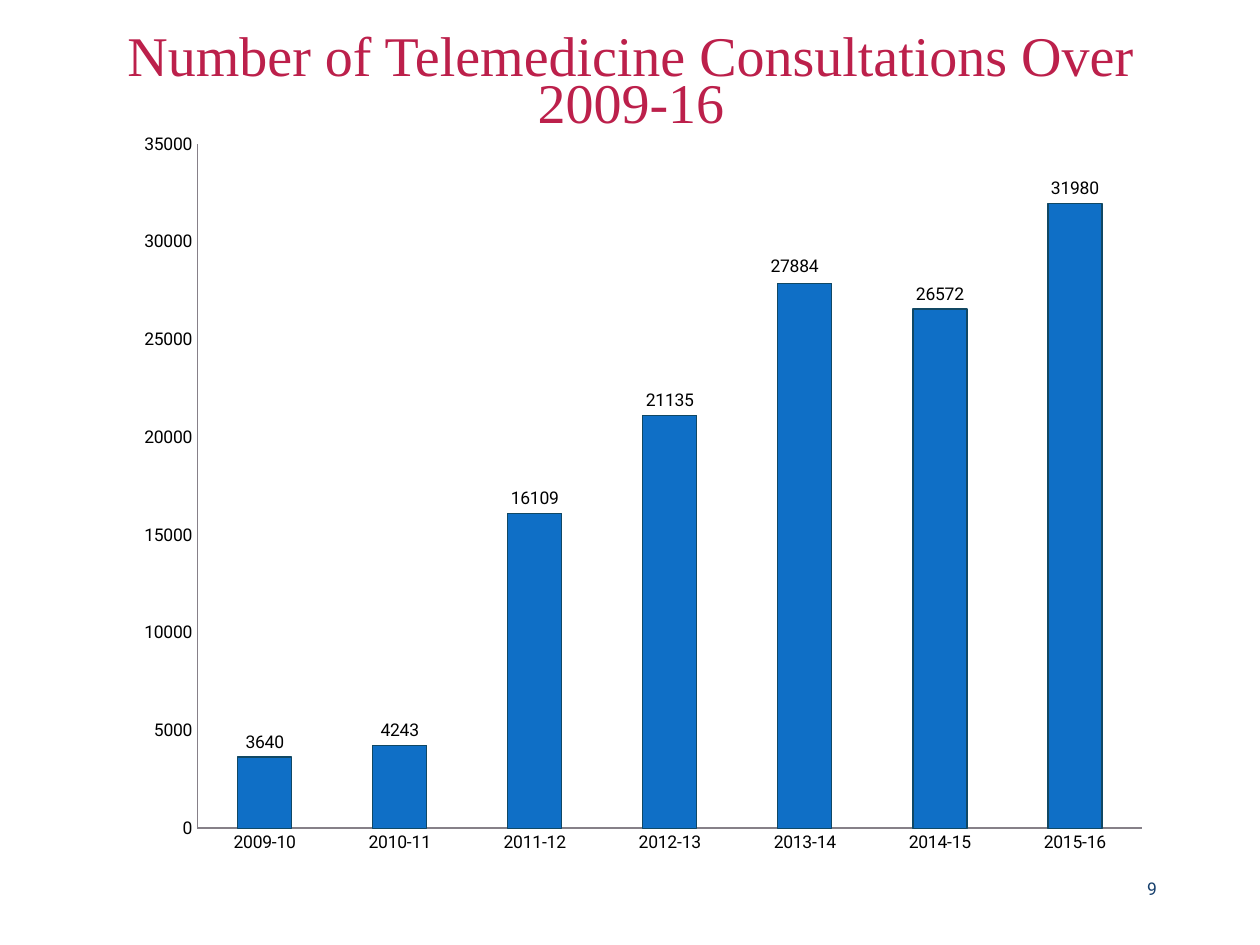
from dataclasses import dataclass

from lxml import etree
from pptx import Presentation
from pptx.chart.data import CategoryChartData
from pptx.dml.color import RGBColor
from pptx.enum import chart as charts, text
from pptx.oxml import parse_xml
from pptx.oxml.ns import nsdecls, qn
from pptx.util import Emu, Pt

PX = 914400 / 126


@dataclass(frozen=True)
class Theme:
    title_font: str = "Times New Roman"
    body_font: str = "Roboto"
    title_size: int = 32
    body_size: int = 10
    title: str = "BC204B"
    number: str = "17406D"
    ink: str = "000000"
    bar: str = "0F6FC6"
    bar_edge: str = "114864"
    axis: str = "868088"
    paper: str = "FFFFFF"


THEME = Theme()

CONSULTATIONS = {
    "2009-10": 3640,
    "2010-11": 4243,
    "2011-12": 16109,
    "2012-13": 21135,
    "2013-14": 27884,
    "2014-15": 26572,
    "2015-16": 31980,
}


def px(length):
    return Emu(round(length * PX))


def style_font(font, name, size, color):
    font.name = name
    font.size = Pt(size)
    font.bold = False
    font.color.rgb = RGBColor.from_string(color)


def style_line(line, color, width):
    line.color.rgb = RGBColor.from_string(color)
    line.width = Pt(width)


def clear_margins(frame):
    frame.margin_left = frame.margin_right = 0
    frame.margin_top = frame.margin_bottom = 0
    frame.word_wrap = True


def add_title(slide, box, wording):
    heading = slide.shapes.title
    heading.left, heading.top, heading.width, heading.height = map(px, box)
    frame = heading.text_frame
    clear_margins(frame)
    frame.auto_size = text.MSO_AUTO_SIZE.NONE
    frame.vertical_anchor = text.MSO_ANCHOR.TOP
    line = frame.paragraphs[0]
    line.alignment = text.PP_ALIGN.CENTER
    line.line_spacing = 0.7
    run = line.add_run()
    run.text = wording
    style_font(run.font, THEME.title_font, THEME.title_size, THEME.title)


def add_page_number(slide, box, number):
    frame = slide.shapes.add_textbox(*map(px, box)).text_frame
    clear_margins(frame)
    frame.vertical_anchor = text.MSO_ANCHOR.BOTTOM
    line = frame.paragraphs[0]
    line.alignment = text.PP_ALIGN.RIGHT
    run = line.add_run()
    run.text = str(number)
    style_font(run.font, THEME.body_font, THEME.body_size, THEME.number)


def manual_layout(**settings):
    layout = parse_xml(f"<c:layout {nsdecls('c')}><c:manualLayout/></c:layout>")
    for tag, value in settings.items():
        etree.SubElement(layout[0], qn(f"c:{tag}")).set("val", str(value))
    return layout


def style_axis(axis, line_width):
    axis.has_major_gridlines = False
    axis.major_tick_mark = axis.minor_tick_mark = charts.XL_TICK_MARK.NONE
    style_font(axis.tick_labels.font, THEME.body_font, THEME.body_size, THEME.ink)
    style_line(axis.format.line, THEME.axis, line_width)


def place_plot(chart):
    area = chart._chartSpace.chart.plotArea
    for layout in area.findall(qn("c:layout")):
        area.remove(layout)
    area.insert(0, manual_layout(layoutTarget="inner", xMode="edge", yMode="edge",
                                 x=0.081, y=0.014, w=0.909, h=0.918))
    area.append(parse_xml(
        f"<c:spPr {nsdecls('c', 'a')}><a:solidFill>"
        f'<a:srgbClr val="{THEME.paper}"/></a:solidFill></c:spPr>'))


def add_consultations_chart(slide, box):
    data = CategoryChartData()
    data.categories = list(CONSULTATIONS)
    data.add_series("Series 1", list(CONSULTATIONS.values()))
    chart = slide.shapes.add_chart(
        charts.XL_CHART_TYPE.COLUMN_CLUSTERED, *map(px, box), data).chart
    chart.has_legend = False
    chart.has_title = False
    style_font(chart.font, THEME.body_font, THEME.body_size, THEME.ink)
    style_axis(chart.category_axis, 1.5)
    style_axis(chart.value_axis, 0.75)
    chart.value_axis.minimum_scale = 0
    chart.value_axis.maximum_scale = 35000
    chart.value_axis.major_unit = 5000

    plot = chart.plots[0]
    plot.gap_width = 150
    plot.vary_by_categories = False
    bars = plot.series[0]
    bars.format.fill.solid()
    bars.format.fill.fore_color.rgb = RGBColor.from_string(THEME.bar)
    style_line(bars.format.line, THEME.bar_edge, 0.75)

    labels = bars.data_labels
    labels.show_value = True
    labels.position = charts.XL_LABEL_POSITION.OUTSIDE_END
    style_font(labels.font, THEME.body_font, THEME.body_size, THEME.ink)

    shifted = bars.points[list(CONSULTATIONS).index("2013-14")].data_label
    shifted.position = charts.XL_LABEL_POSITION.OUTSIDE_END
    style_font(shifted.font, THEME.body_font, THEME.body_size, THEME.ink)
    index = labels._element.find(qn("c:dLbl")).find(qn("c:idx"))
    index.addnext(manual_layout(x=-0.01, y=-0.003))
    place_plot(chart)


def main():
    deck = Presentation()
    deck.slide_width, deck.slide_height = px(1260), px(945)
    slide = deck.slides.add_slide(deck.slide_layouts[5])
    add_page_number(slide, (992, 879, 165, 20), 9)
    add_title(slide, (105, 39, 1052, 92),
              "Number of Telemedicine Consultations Over 2009-16")
    add_consultations_chart(slide, (113, 134, 1040, 745))
    deck.save("out.pptx")


if __name__ == "__main__":
    main()
